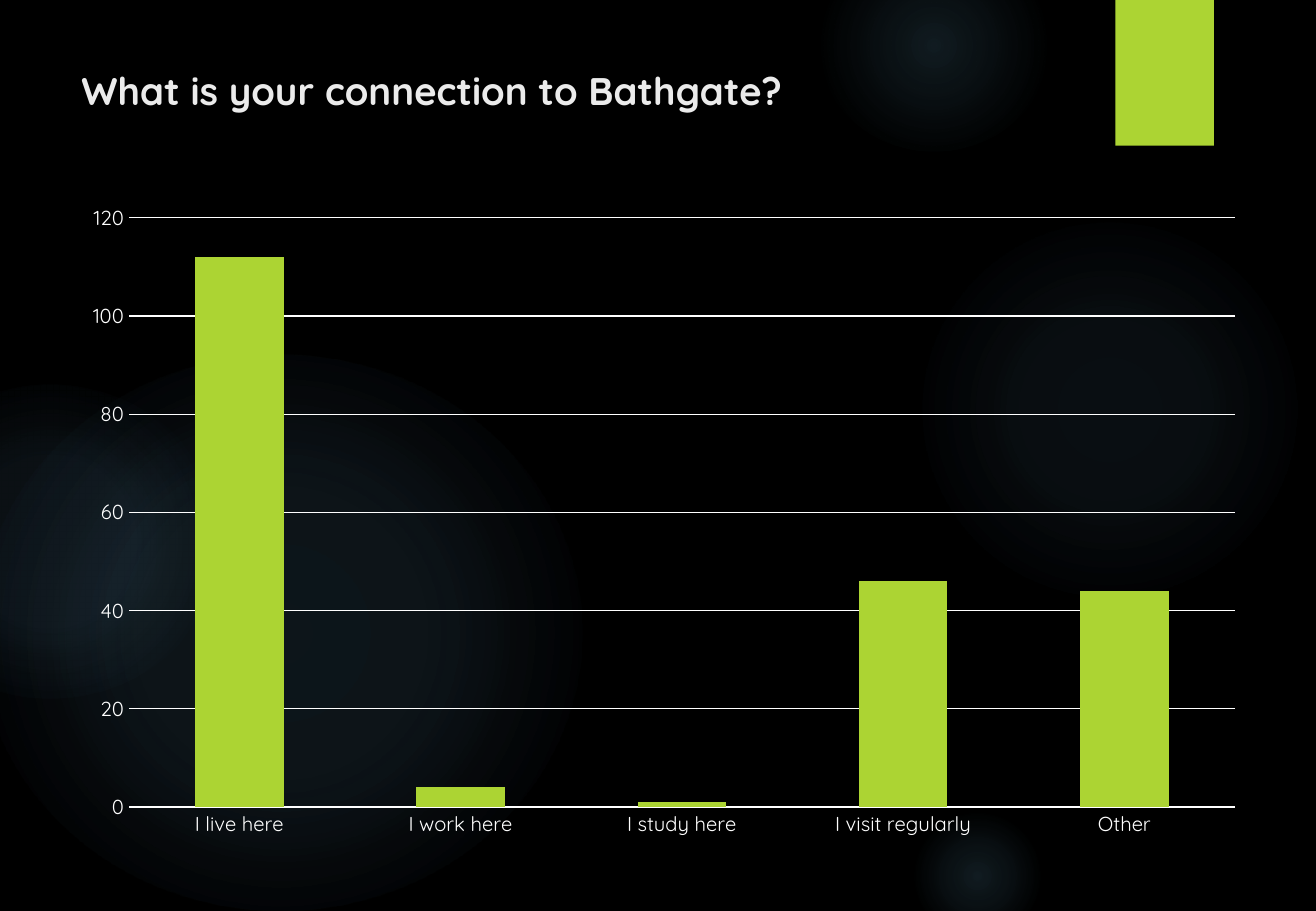
"""Build a slide with a column chart of people's connections to Bathgate."""
from dataclasses import dataclass

from pptx import Presentation
from pptx.chart.data import CategoryChartData
from pptx.dml.color import RGBColor
from pptx.enum.chart import XL_CHART_TYPE as ChartType, XL_TICK_MARK as Tick
from pptx.enum.shapes import MSO_SHAPE as Shape
from pptx.enum.text import MSO_ANCHOR as Anchor, MSO_AUTO_SIZE as AutoSize, PP_ALIGN as Align
from pptx.oxml import parse_xml
from pptx.oxml.ns import nsdecls, qn
from pptx.util import Inches, Pt

WIDTH, HEIGHT = Inches(10.83), Inches(7.5)
FONT = "Quicksand"
BLACK, WHITE, PALE, GREEN, BLUE = "000000", "FFFFFF", "EBEBEB", "ACD433", "7AC4F0"


@dataclass(frozen=True)
class Box:
    """A rectangle in percent of the slide's width and height."""
    left: float
    top: float
    width: float
    height: float

    def emu(self) -> tuple[int, int, int, int]:
        """Return left, top, width and height in slide units."""
        return (round(WIDTH * self.left / 100), round(HEIGHT * self.top / 100),
                round(WIDTH * self.width / 100), round(HEIGHT * self.height / 100))


@dataclass(frozen=True)
class Glow:
    """A soft light: opacity at the centre and at 36 %, and where it fades out."""
    box: Box
    centre: int
    middle: int
    fade: int


TITLE = Box(5.26, 6.67, 77.19, 14.53)
CHART = Box(5.26, 21.07, 90.4, 72.27)
TAB = Box(84.76, 0, 7.48, 16)
GLOWS = [
    Glow(Box(68.88, 24.4, 30.84, 41.07), 7, 6, 69),
    Glow(Box(62.23, -6.67, 17.54, 23.33), 14, 7, 73),
    Glow(Box(68.88, 88.93, 10.8, 14.4), 14, 7, 66),
    Glow(Box(-1.66, 38.93, 45.89, 61.07), 11, 10, 75),
    Glow(Box(-9.14, 42.27, 25.85, 34.4), 8, 8, 72),
]
ANSWERS = {"I live here": 112, "I work here": 4, "I study here": 1,
           "I visit regularly": 46, "Other": 44}


def rgb(value: str) -> RGBColor:
    """Turn a hex string into a colour."""
    return RGBColor.from_string(value)


def style(font, size: float, color: str) -> None:
    """Set the typeface, size and colour of a font."""
    font.name, font.size = FONT, Pt(size)
    font.color.rgb = rgb(color)


def add_shape(s, kind: Shape, box: Box, color: str):
    """Add a flat shape without outline."""
    sp = s.shapes.add_shape(kind, *box.emu())
    sp.shadow.inherit = False
    sp.fill.solid()
    sp.fill.fore_color.rgb = rgb(color)
    sp.line.fill.background()
    return sp


def add_glow(s, glow: Glow) -> None:
    """Add an ellipse with a fading radial fill."""
    sp = add_shape(s, Shape.OVAL, glow.box, BLUE)
    stops = "".join(
        f'<a:gs pos="{pos * 1000}"><a:srgbClr val="{BLUE}">'
        f'<a:alpha val="{alpha * 1000}"/></a:srgbClr></a:gs>'
        for pos, alpha in ((0, glow.centre), (36, glow.middle), (glow.fade, 0)))
    grad = parse_xml(
        f'<a:gradFill {nsdecls("a")} rotWithShape="1"><a:gsLst>{stops}</a:gsLst>'
        '<a:path path="circle"><a:fillToRect l="50000" t="50000" r="50000" b="50000"/>'
        '</a:path></a:gradFill>')
    props = sp._element.spPr
    props.replace(props.find(qn("a:solidFill")), grad)


def set_title(s, text: str) -> None:
    """Place and format the title, in front of the backdrop."""
    sp = s.shapes.title
    sp.left, sp.top, sp.width, sp.height = TITLE.emu()
    tf = sp.text_frame
    tf.word_wrap, tf.auto_size, tf.vertical_anchor = True, AutoSize.NONE, Anchor.TOP
    p = tf.paragraphs[0]
    p.alignment = Align.JUSTIFY
    r = p.add_run()
    r.text = text
    style(r.font, 22.8, PALE)
    r.font.bold = True
    s.shapes._spTree.append(sp._element)


def add_answers(s) -> None:
    """Add the column chart of answers."""
    data = CategoryChartData()
    data.categories = list(ANSWERS)
    data.add_series("Series 1", list(ANSWERS.values()))
    chart = s.shapes.add_chart(ChartType.COLUMN_CLUSTERED, *CHART.emu(), data).chart
    chart.has_title = chart.has_legend = False
    style(chart.font, 10, WHITE)
    for axis in (chart.category_axis, chart.value_axis):
        axis.major_tick_mark = axis.minor_tick_mark = Tick.NONE
        axis.format.line.fill.background()
        style(axis.tick_labels.font, 12, WHITE)
    grid = chart.value_axis.major_gridlines.format.line
    grid.color.rgb, grid.width = rgb(WHITE), Pt(0.75)
    plot = chart.plots[0]
    plot.gap_width, plot.vary_by_categories = 150, False
    fill = plot.series[0].format.fill
    fill.solid()
    fill.fore_color.rgb = rgb(GREEN)


def main() -> None:
    """Build and save the slide."""
    prs = Presentation()
    prs.slide_width, prs.slide_height = WIDTH, HEIGHT
    s = prs.slides.add_slide(prs.slide_layouts.get_by_name("Title Only"))
    s.background.fill.solid()
    s.background.fill.fore_color.rgb = rgb(BLACK)
    for glow in GLOWS:
        add_glow(s, glow)
    add_shape(s, Shape.RECTANGLE, TAB, GREEN)
    set_title(s, "What is your connection to Bathgate?")
    add_answers(s)
    prs.save("out.pptx")


if __name__ == "__main__":
    main()
